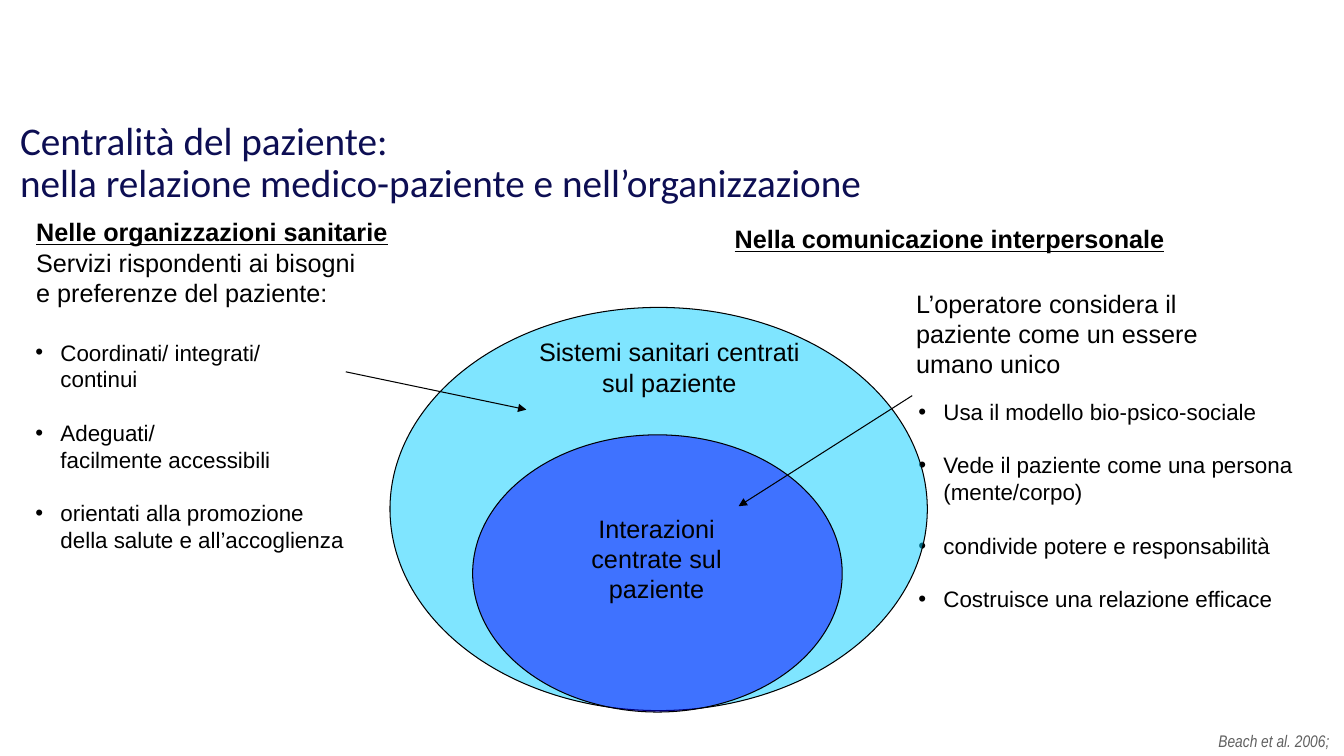
from copy import deepcopy

from lxml import etree
from pptx import Presentation
from pptx.dml.color import RGBColor
from pptx.enum.shapes import MSO_CONNECTOR, MSO_SHAPE
from pptx.enum.text import MSO_ANCHOR, MSO_AUTO_SIZE, PP_ALIGN
from pptx.oxml.ns import qn
from pptx.util import Pt

LEFT, CENTER, RIGHT = PP_ALIGN.LEFT, PP_ALIGN.CENTER, PP_ALIGN.RIGHT
TOP, MIDDLE = MSO_ANCHOR.TOP, MSO_ANCHOR.MIDDLE
NO_FIT = MSO_AUTO_SIZE.NONE
OVAL = MSO_SHAPE.OVAL
STRAIGHT = MSO_CONNECTOR.STRAIGHT
TWO_CONTENT = 3

COLORS = {
    "title": "0D0E53",
    "text": "000000",
    "line": "000000",
    "source": "606060",
    "systems": "00CCFF",
    "interactions": "0000FF",
}
BULLET_INDENT = 18
ITEM_GAP = 19


def color(name):
    return RGBColor.from_string(COLORS[name])


def place(shape, box):
    shape.left, shape.top, shape.width, shape.height = map(Pt, box)


def write(para, text, size=18, font="Arial", ink="text", bold=False,
          italic=False, underline=False, align=LEFT, before=0, spacing=1.0):
    """Fill a paragraph; a vertical tab in the text breaks the line."""
    para.text = text
    para.alignment = align
    para.space_before = Pt(before)
    para.space_after = Pt(0)
    para.line_spacing = spacing
    for span in para.runs:
        span.font.name = font
        span.font.size = Pt(size)
        span.font.bold = bold
        span.font.italic = italic
        span.font.underline = underline
        span.font.color.rgb = color(ink)
    for line_break in para._p.findall(qn("a:br")):
        line_break.append(deepcopy(para.runs[0]._r.rPr))


def prepare(frame, anchor=TOP):
    frame.word_wrap = True
    frame.auto_size = NO_FIT
    frame.vertical_anchor = anchor


def add_text(page, box, *lines, **style):
    """Add a text box with one paragraph per line and return its text frame."""
    frame = page.shapes.add_textbox(*map(Pt, box)).text_frame
    prepare(frame)
    for index, line in enumerate(lines):
        para = frame.add_paragraph() if index else frame.paragraphs[0]
        write(para, line, **style)
    return frame


def fill_title(page, box):
    title = page.shapes.title
    place(title, box)
    prepare(title.text_frame, MIDDLE)
    write(title.text_frame.paragraphs[0],
          "Centralità del paziente:\vnella relazione medico-paziente e nell’organizzazione",
          size=28, font="Calibri", ink="title", spacing=0.9)


def fill_list(body, box, items):
    place(body, box)
    prepare(body.text_frame)
    for index, item in enumerate(items):
        para = body.text_frame.add_paragraph() if index else body.text_frame.paragraphs[0]
        write(para, item, size=16, before=ITEM_GAP if index else 0)
        props = para._p.get_or_add_pPr()
        props.set("marL", str(Pt(BULLET_INDENT)))
        props.set("indent", str(-Pt(BULLET_INDENT)))
        etree.SubElement(props, qn("a:buFont")).set("typeface", "Arial")
        etree.SubElement(props, qn("a:buChar")).set("char", "•")


def add_ellipse(page, box, fill):
    ellipse = page.shapes.add_shape(OVAL, *map(Pt, box))
    ellipse.shadow.inherit = False
    ellipse.fill.solid()
    ellipse.fill.fore_color.rgb = color(fill)
    tint = ellipse.fill._xPr.find(".//" + qn("a:srgbClr"))
    etree.SubElement(tint, qn("a:alpha")).set("val", "50000")
    ellipse.line.color.rgb = color("line")
    ellipse.line.width = Pt(0.75)


def add_arrow(page, start, end):
    arrow = page.shapes.add_connector(STRAIGHT, *map(Pt, start + end))
    arrow.line.color.rgb = color("line")
    arrow.line.width = Pt(0.75)
    etree.SubElement(arrow.line._get_or_add_ln(), qn("a:tailEnd")).set("type", "triangle")
    etree.SubElement(arrow._element.spPr, qn("a:effectLst"))


def add_diagram(page, box):
    """Nested ellipses with their labels and the arrows from both sides."""
    left, top, width, height = box
    add_ellipse(page, box, "systems")
    add_ellipse(page, (left + 59, top + 91, 264, 198), "interactions")
    add_arrow(page, (left - 31.6, top + 46), (left + 97.4, top + 73))
    add_arrow(page, (left + 373, top + 63), (left + 249, top + 142))
    add_text(page, (left + 98.7, top + 17.3, 201.6, 72),
             "Sistemi sanitari centrati sul paziente", align=CENTER)
    add_text(page, (left + 108.7, top + 143.3, 163.4, 71.3),
             "Interazioni centrate sul paziente", align=CENTER)


def add_organizations(page, body, box):
    left, top, width, height = box
    frame = add_text(page, (left, top, 491, 72), "Nelle organizzazioni sanitarie",
                     bold=True, underline=True)
    write(frame.add_paragraph(), "Servizi rispondenti ai bisogni\ve preferenze del paziente:")
    fill_list(body, (left - 0.7, top + 87.1, width, height - 87.1), [
        "Coordinati/ integrati/\vcontinui",
        "Adeguati/\vfacilmente accessibili",
        "orientati alla promozione della salute e all’accoglienza",
    ])


def add_communication(page, body, box):
    left, top, width, height = box
    add_text(page, (left, top, width, 28.8), "Nella comunicazione interpersonale",
             bold=True, underline=True)
    add_text(page, (left + 129.6, top + 46, 287, 72),
             "L’operatore considera il", "paziente come un essere\vumano unico")
    fill_list(body, (left + 131, top + 124.6, 305.3, height - 124.6), [
        "Usa il modello bio-psico-sociale",
        "Vede il paziente come una persona (mente/corpo)",
        "condivide potere e responsabilità",
        "Costruisce una relazione efficace",
    ])


def main():
    deck = Presentation()
    deck.slide_width, deck.slide_height = Pt(960), Pt(540)
    page = deck.slides.add_slide(deck.slide_layouts[TWO_CONTENT])
    title, left_body, right_body = page.placeholders
    fill_title(page, (7.2, 88.6, 941, 56.9))
    add_diagram(page, (278.6, 219.6, 383.8, 288))
    add_organizations(page, left_body, (18.7, 151.2, 242.6, 306))
    add_communication(page, right_body, (517.7, 156.2, 431.3, 343.4))
    add_text(page, (18.7, 518.4, 938, 21.6), "Beach et al. 2006;",
             size=12, font="Arial Narrow", ink="source", italic=True, align=RIGHT)
    deck.save("out.pptx")


if __name__ == "__main__":
    main()
